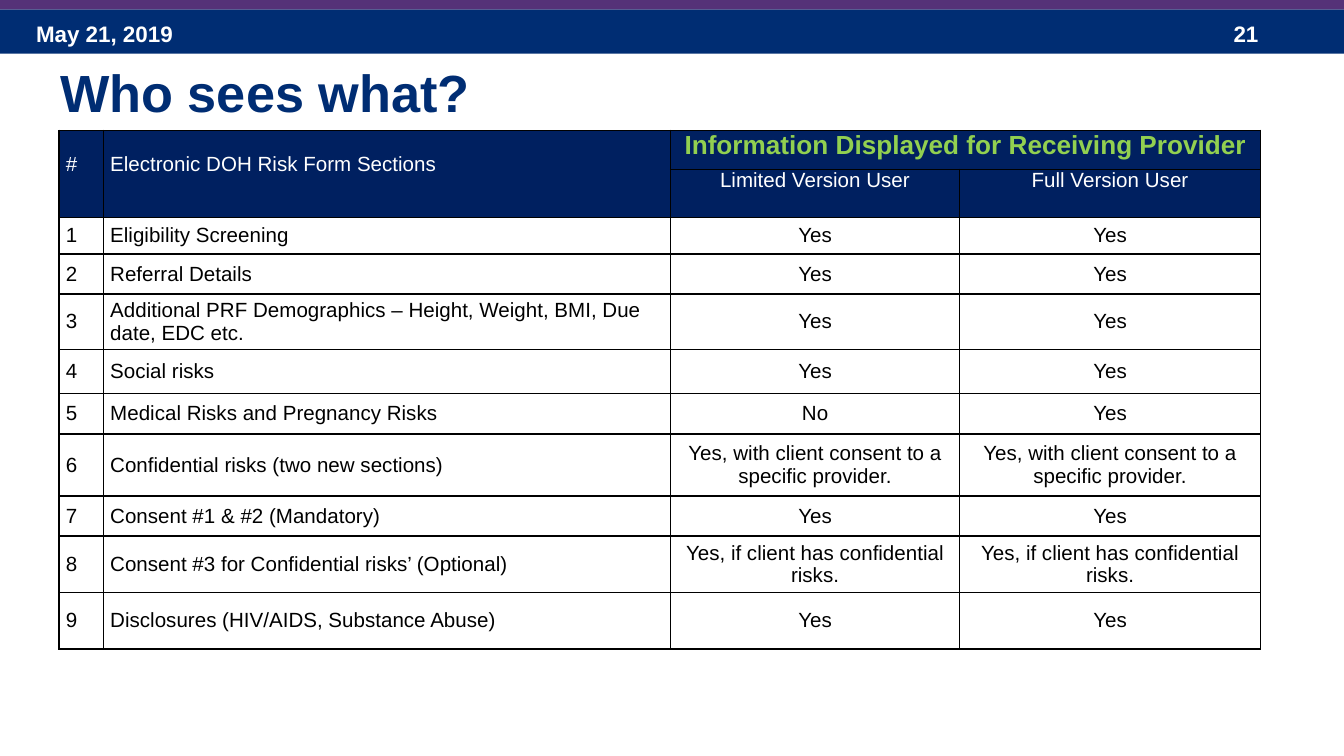
"""Build the slide that shows which form sections each provider can see."""
import dataclasses

import lxml.etree
import pptx
import pptx.dml.color
import pptx.enum.shapes
import pptx.enum.text
import pptx.oxml.ns
import pptx.util

Inches = pptx.util.Inches
Align = pptx.enum.text.PP_ALIGN
Anchor = pptx.enum.text.MSO_ANCHOR


@dataclasses.dataclass(frozen=True)
class Theme:
    font: str = "Arial"
    navy: str = "002D73"
    purple: str = "553278"
    header: str = "002060"
    green: str = "92D050"
    white: str = "FFFFFF"
    black: str = "000000"
    title_size: int = 28
    banner_size: int = 12
    group_size: int = 14
    cell_size: int = 11
    border_width: int = 1


class SlideBuilder:
    def __init__(self, slide, theme):
        self.slide = slide
        self.theme = theme

    def color(self, value):
        return pptx.dml.color.RGBColor.from_string(value)

    def format(self, frame, size, color, bold=False, align=Align.LEFT):
        for paragraph in frame.paragraphs:
            paragraph.alignment = align
            for run in paragraph.runs:
                run.font.name = self.theme.font
                run.font.size = pptx.util.Pt(size)
                run.font.bold = bold
                run.font.color.rgb = self.color(color)

    def band(self, top, height, color):
        band = self.slide.shapes.add_shape(
            pptx.enum.shapes.MSO_SHAPE.RECTANGLE, 0, Inches(top), Inches(10), Inches(height))
        band.shadow.inherit = False
        band.fill.solid()
        band.fill.fore_color.rgb = self.color(color)
        band.line.fill.background()

    def banner_text(self, text, left, width):
        label = self.slide.shapes.add_textbox(Inches(left), Inches(0.1), Inches(width), Inches(0.3))
        frame = label.text_frame
        frame.word_wrap = True
        frame.vertical_anchor = Anchor.MIDDLE
        frame.text = text
        self.format(frame, self.theme.banner_size, self.theme.white, bold=True)

    def title(self, text):
        title = self.slide.shapes.title
        title.left, title.top = Inches(0.35), Inches(0.4)
        title.width, title.height = Inches(9.56), Inches(0.57)
        title.text_frame.text = text
        title.text_frame.vertical_anchor = Anchor.MIDDLE
        self.format(title.text_frame, self.theme.title_size, self.theme.navy, bold=True)

    def borders(self, cell):
        properties = cell._tc.get_or_add_tcPr()
        qn = pptx.oxml.ns.qn
        for side in ("a:lnL", "a:lnR", "a:lnT", "a:lnB"):
            line = lxml.etree.SubElement(
                properties, qn(side), w=str(pptx.util.Pt(self.theme.border_width)))
            fill = lxml.etree.SubElement(line, qn("a:solidFill"))
            lxml.etree.SubElement(fill, qn("a:srgbClr"), val=self.theme.black)

    def table(self, left, top, widths, heights):
        table = self.slide.shapes.add_table(
            len(heights), len(widths), Inches(left), Inches(top),
            Inches(sum(widths)), Inches(sum(heights))).table
        table.first_row = table.horz_banding = False
        for column, width in zip(table.columns, widths):
            column.width = Inches(width)
        for row, height in zip(table.rows, heights):
            row.height = Inches(height)
        for cell in table.iter_cells():
            cell.margin_left = cell.margin_right = Inches(0.05)
            cell.margin_top = cell.margin_bottom = 0
            self.borders(cell)
            cell.fill.background()
        return table

    def header_cell(self, cell, text, align=Align.LEFT, group=False):
        theme = self.theme
        cell.fill.solid()
        cell.fill.fore_color.rgb = self.color(theme.header)
        cell.text_frame.text = text
        size, color = (theme.group_size, theme.green) if group else (theme.cell_size, theme.white)
        self.format(cell.text_frame, size, color, group, align)

    def body_cell(self, cell, text, align):
        cell.vertical_anchor = Anchor.MIDDLE
        cell.text_frame.text = text
        self.format(cell.text_frame, self.theme.cell_size, self.theme.black, align=align)


CONSENT = "Yes, with client consent to a specific provider."
CONFIDENTIAL = "Yes, if client has confidential risks."
SECTIONS = [
    ("Eligibility Screening", "Yes", "Yes", 0.27),
    ("Referral Details", "Yes", "Yes", 0.3),
    ("Additional PRF Demographics – Height, Weight, BMI, Due date, EDC etc.", "Yes", "Yes", 0.41),
    ("Social risks", "Yes", "Yes", 0.33),
    ("Medical Risks and Pregnancy Risks", "No", "Yes", 0.3),
    ("Confidential risks (two new sections)", CONSENT, CONSENT, 0.46),
    ("Consent #1 & #2 (Mandatory)", "Yes", "Yes", 0.3),
    ("Consent #3 for Confidential risks’ (Optional)", CONFIDENTIAL, CONFIDENTIAL, 0.42),
    ("Disclosures (HIV/AIDS, Substance Abuse)", "Yes", "Yes", 0.42),
]


def main():
    presentation = pptx.Presentation()
    presentation.slide_width = Inches(10)
    presentation.slide_height = Inches(10 * 9 / 16)
    slide = presentation.slides.add_slide(presentation.slide_layouts[5])
    theme = Theme()
    builder = SlideBuilder(slide, theme)

    builder.band(0.07, 0.33, theme.navy)
    builder.banner_text("May 21, 2019", 0.17, 2.33)
    builder.banner_text("21", 9.08, 0.75)
    builder.band(-0.02, 0.09, theme.purple)
    builder.title("Who sees what?")

    heights = [0.29, 0.36] + [section[-1] for section in SECTIONS]
    access = builder.table(0.44, 0.97, [0.33, 4.22, 2.15, 2.24], heights)
    for column, heading in enumerate(("#", "Electronic DOH Risk Form Sections")):
        cell = access.cell(0, column)
        cell.merge(access.cell(1, column))
        cell.margin_top = Inches(0.17)
        builder.header_cell(cell, heading)
    access.cell(0, 2).merge(access.cell(0, 3))
    builder.header_cell(
        access.cell(0, 2), "Information Displayed for Receiving Provider", Align.CENTER, group=True)
    for column, user in enumerate(("Limited Version User", "Full Version User"), start=2):
        builder.header_cell(access.cell(1, column), user, Align.CENTER)

    for number, (section, limited, full, _) in enumerate(SECTIONS, start=1):
        for column, text in enumerate((str(number), section, limited, full)):
            align = Align.LEFT if column < 2 else Align.CENTER
            builder.body_cell(access.cell(number + 1, column), text, align)

    presentation.save("out.pptx")


if __name__ == "__main__":
    main()
